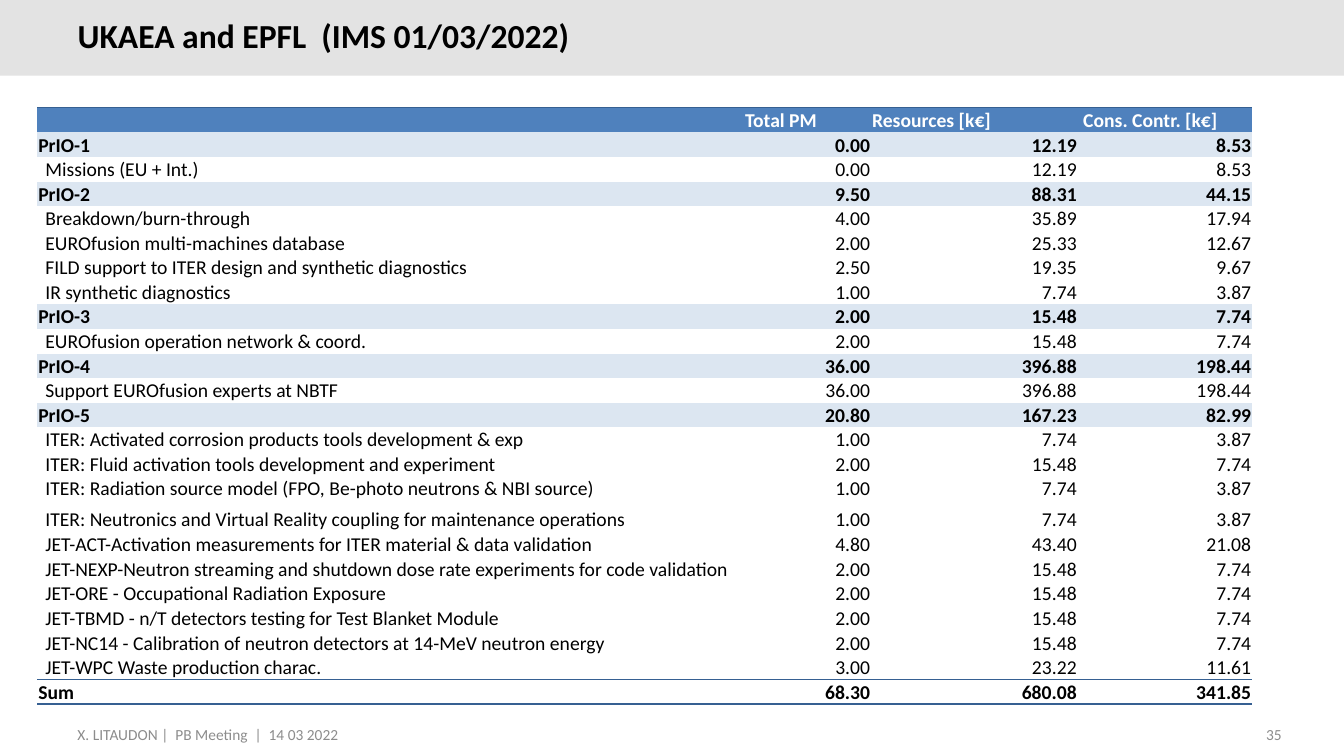
import lxml.etree
import pptx
import pptx.dml.color
import pptx.enum.shapes
import pptx.enum.text
import pptx.oxml.ns
import pptx.util

Inches = pptx.util.Inches
Pt = pptx.util.Pt
ALIGN = pptx.enum.text.PP_ALIGN
ANCHOR = pptx.enum.text.MSO_ANCHOR
qn = pptx.oxml.ns.qn

TITLE = "UKAEA and EPFL  (IMS 01/03/2022)"
FOOTER = "X. LITAUDON |  PB Meeting  |  14 03 2022"
PAGE = "35"
HEADER = ("", "Total PM", "Resources [k€]", " Cons. Contr. [k€]")
PROJECTS = [
    (("PrIO-1", "0.00", "12.19", "8.53"), [
        ("Missions (EU + Int.)", "0.00", "12.19", "8.53"),
    ]),
    (("PrIO-2", "9.50", "88.31", "44.15"), [
        ("Breakdown/burn-through", "4.00", "35.89", "17.94"),
        ("EUROfusion multi-machines database", "2.00", "25.33", "12.67"),
        ("FILD support to ITER design and synthetic diagnostics", "2.50", "19.35", "9.67"),
        ("IR synthetic diagnostics", "1.00", "7.74", "3.87"),
    ]),
    (("PrIO-3", "2.00", "15.48", "7.74"), [
        ("EUROfusion operation network & coord.", "2.00", "15.48", "7.74"),
    ]),
    (("PrIO-4", "36.00", "396.88", "198.44"), [
        ("Support EUROfusion experts at NBTF", "36.00", "396.88", "198.44"),
    ]),
    (("PrIO-5", "20.80", "167.23", "82.99"), [
        ("ITER: Activated corrosion products tools development & exp", "1.00", "7.74", "3.87"),
        ("ITER: Fluid activation tools development and experiment", "2.00", "15.48", "7.74"),
        ("ITER: Radiation source model (FPO, Be-photo neutrons & NBI source)", "1.00", "7.74", "3.87"),
        ("ITER: Neutronics and Virtual Reality coupling for maintenance operations", "1.00", "7.74", "3.87"),
        ("JET-ACT-Activation measurements for ITER material & data validation", "4.80", "43.40", "21.08"),
        ("JET-NEXP-Neutron streaming and shutdown dose rate experiments for code validation",
         "2.00", "15.48", "7.74"),
        ("JET-ORE - Occupational Radiation Exposure", "2.00", "15.48", "7.74"),
        ("JET-TBMD - n/T detectors testing for Test Blanket Module", "2.00", "15.48", "7.74"),
        ("JET-NC14 - Calibration of neutron detectors at 14-MeV neutron energy", "2.00", "15.48", "7.74"),
        ("JET-WPC Waste production charac.", "3.00", "23.22", "11.61"),
    ]),
]
TOTAL = ("Sum", "68.30", "680.08", "341.85")

COLORS = {"bar": "E3E3E3", "header": "4F81BD", "project": "DCE6F1", "rule": "366092",
          "text": "000000", "header_text": "FFFFFF", "footer": "8C8C8C"}
FONT = "Calibri"
COLUMN_WIDTHS = (7.01, 1.26, 2.05, 1.73)
ROW_HEIGHT, TALL_ROW_HEIGHT, TALL_ROW = 0.24, 0.31, 16
PLAIN_TABLE_STYLE = "{2D5ABB26-0587-4C30-8999-92F81FD0307C}"


def rgb(name):
    return pptx.dml.color.RGBColor.from_string(COLORS[name])


def write(frame, text, size=14, color="text", bold=False, align=ALIGN.LEFT,
          anchor=ANCHOR.TOP, line_spacing=None):
    frame.word_wrap = True
    frame.vertical_anchor = anchor
    paragraph = frame.paragraphs[0]
    paragraph.alignment = align
    paragraph.line_spacing = line_spacing
    if not text:
        lxml.etree.SubElement(paragraph._p, qn("a:endParaRPr"), sz=str(size * 100))
        return
    run = paragraph.add_run()
    run.text = text
    run.font.name = FONT
    run.font.size = Pt(size)
    run.font.bold = bold
    run.font.color.rgb = rgb(color)


def add_rule(cell, edge, width):
    """Draw a cell border; edge is "a:lnT" or "a:lnB"."""
    line = lxml.etree.SubElement(cell._tc.get_or_add_tcPr(), qn(edge), w=str(Pt(width)))
    fill = lxml.etree.SubElement(line, qn("a:solidFill"))
    lxml.etree.SubElement(fill, qn("a:srgbClr"), val=COLORS["rule"])


def fill_cell(cell, text, kind, column):
    is_number = column > 0 and kind != "header"
    cell.margin_left = Inches(0.08 if kind == "task" and column == 0 else 0.01)
    cell.margin_right = cell.margin_top = Inches(0.01)
    cell.margin_bottom = 0
    write(cell.text_frame, text, bold=kind != "task",
          color="header_text" if kind == "header" else "text",
          align=ALIGN.RIGHT if is_number else ALIGN.LEFT)
    cell.vertical_anchor = ANCHOR.BOTTOM
    if kind == "header":
        add_rule(cell, "a:lnT", 1)
    if kind == "total":
        add_rule(cell, "a:lnT", 0.5)
        add_rule(cell, "a:lnB", 1)
    if kind in ("header", "project"):
        cell.fill.solid()
        cell.fill.fore_color.rgb = rgb(kind)
    else:
        cell.fill.background()


def add_budget(slide):
    rows = [("header", HEADER)]
    for project, tasks in PROJECTS:
        rows.append(("project", project))
        rows += [("task", task) for task in tasks]
    rows.append(("total", TOTAL))

    heights = [ROW_HEIGHT] * len(rows)
    heights[TALL_ROW] = TALL_ROW_HEIGHT
    budget = slide.shapes.add_table(
        len(rows), len(COLUMN_WIDTHS), Inches(0.37), Inches(1.07),
        Inches(sum(COLUMN_WIDTHS)), Inches(sum(heights))).table
    budget.first_row = budget.horz_banding = False
    budget._tbl.tblPr.find(qn("a:tableStyleId")).text = PLAIN_TABLE_STYLE
    for column, width in zip(budget.columns, COLUMN_WIDTHS):
        column.width = Inches(width)
    for r, (kind, values) in enumerate(rows):
        budget.rows[r].height = Inches(heights[r])
        for c, value in enumerate(values):
            fill_cell(budget.cell(r, c), value, kind, c)


def main():
    deck = pptx.Presentation()
    deck.slide_width, deck.slide_height = Inches(13.33), Inches(7.5)
    slide = deck.slides.add_slide(deck.slide_layouts[5])

    bar = slide.shapes.add_shape(pptx.enum.shapes.MSO_SHAPE.RECTANGLE,
                                 0, 0, deck.slide_width, Inches(0.75))
    bar.shadow.inherit = False
    bar.fill.solid()
    bar.fill.fore_color.rgb = rgb("bar")
    bar.line.fill.background()

    title = slide.shapes.title
    bar._element.addnext(title._element)
    title.left, title.top = Inches(0.67), Inches(0.13)
    title.width, title.height = Inches(11), Inches(0.5)
    write(title.text_frame, TITLE, size=24, bold=True, anchor=ANCHOR.MIDDLE, line_spacing=Pt(24))

    for text, left, width, height, align in (
            (FOOTER, 0.67, 3.8, 0.36, ALIGN.LEFT),
            (PAGE, 12.02, 0.79, 0.22, ALIGN.RIGHT)):
        note = slide.shapes.add_textbox(Inches(left), Inches(7.14), Inches(width), Inches(height))
        write(note.text_frame, text, size=11, color="footer", align=align)

    add_budget(slide)
    deck.save("out.pptx")


if __name__ == "__main__":
    main()
